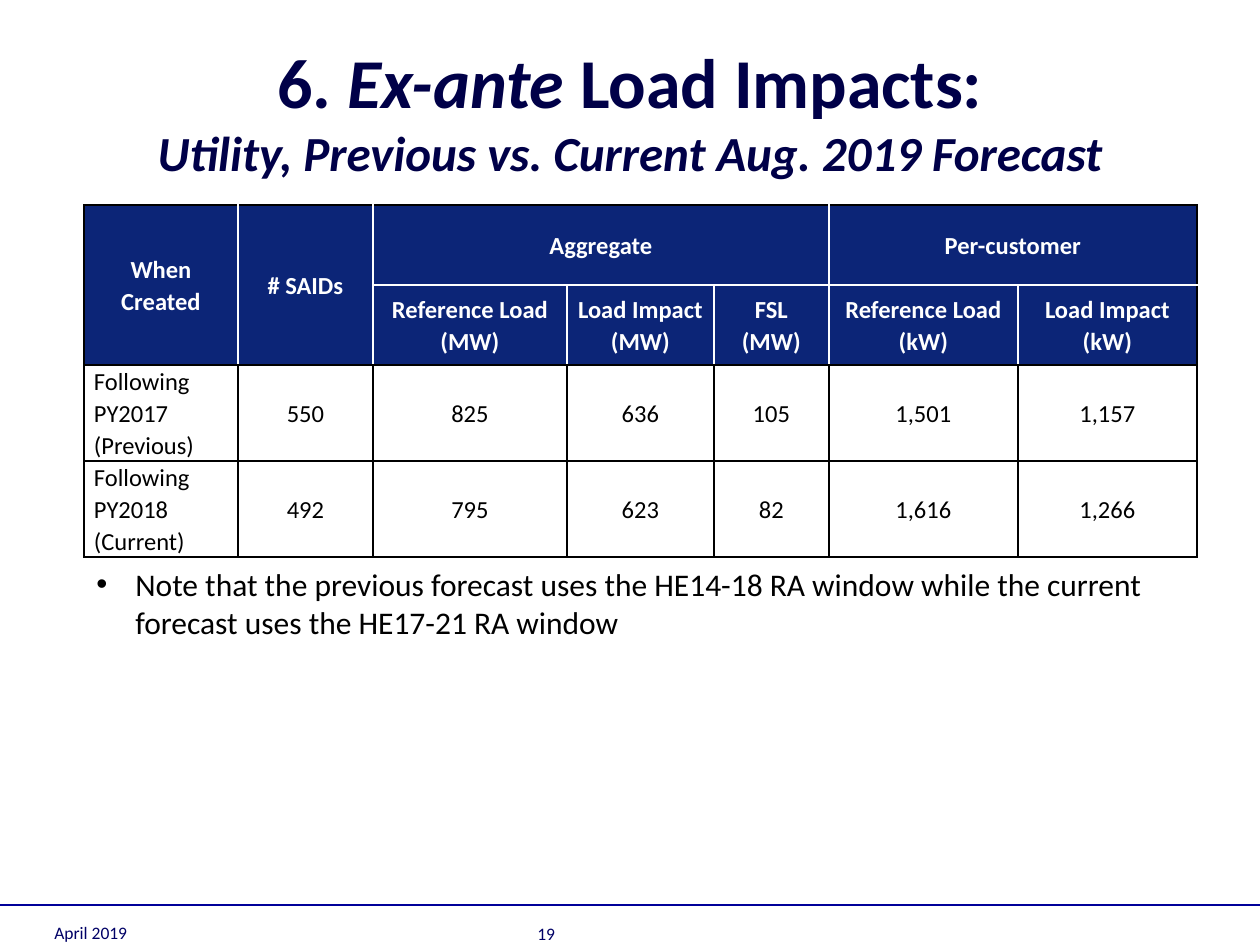
from dataclasses import dataclass
from typing import Any

from lxml.etree import SubElement as Sub
from pptx import Presentation as Deck
from pptx.dml.color import RGBColor as Rgb
from pptx.enum.shapes import MSO_CONNECTOR as Link
from pptx.enum.text import MSO_ANCHOR as Anchor, MSO_AUTO_SIZE as Fit, PP_ALIGN as Align
from pptx.oxml.ns import qn
from pptx.util import Emu, Pt


@dataclass(frozen=True)
class Theme:
    face: str = "Calibri"
    black: str = "000000"
    white: str = "FFFFFF"
    navy: str = "0C2577"
    title: str = "000048"
    foot: str = "000066"
    rule: str = "000099"
    head: int = 40
    sub: int = 28
    note: int = 18
    cell: int = 14
    small: int = 10


@dataclass(frozen=True)
class Box:
    left: int
    top: int
    width: int
    height: int


@dataclass(frozen=True)
class Part:
    text: str
    size: int
    slant: bool


@dataclass(frozen=True)
class Span:
    row: int
    col: int
    last_row: int
    last_col: int


T = Theme()
COLS = [154, 135, 194, 147, 115, 189, 179]
ROWS = [80, 80, 96, 96]
HEADS = 2
GRID = [
    ["When Created", "# SAIDs", "Aggregate", "", "", "Per-customer", ""],
    ["", "", "Reference Load (MW)", "Load Impact (MW)", "FSL (MW)",
     "Reference Load (kW)", "Load Impact (kW)"],
    ["Following PY2017 (Previous)", "550", "825", "636", "105", "1,501", "1,157"],
    ["Following PY2018 (Current)", "492", "795", "623", "82", "1,616", "1,266"],
]
SPANS = [Span(0, 0, 1, 0), Span(0, 1, 1, 1), Span(0, 2, 0, 4), Span(0, 5, 0, 6)]
TITLE = [
    [Part("6. ", T.head, False), Part("Ex-ante", T.head, True),
     Part(" Load Impacts:", T.head, False)],
    [Part("Utility, Previous vs. Current Aug. 2019 Forecast", T.sub, True)],
]
NOTE = ("Note that the previous forecast uses the HE14-18 RA window "
        "while the current forecast uses the HE17-21 RA window")
FEET = {"April 2019": Box(42, 883, 294, 66), "19": Box(525, 884, 294, 66)}


def px(count: int) -> Emu:
    """Turn pixels into EMU."""
    return Emu(round(count * 914400 / 126))


def style(font: Any, size: int, color: str, bold: bool = False, slant: bool = False) -> None:
    """Set the face, size, colour and weight of a font."""
    font.name, font.size = T.face, Pt(size)
    font.bold, font.italic = bold, slant
    font.color.rgb = Rgb.from_string(color)


def frame(slide: Any, box: Box, anchor: Anchor) -> Any:
    """Add a wrapping text box and return its text frame."""
    shape = slide.shapes.add_textbox(px(box.left), px(box.top), px(box.width), px(box.height))
    text = shape.text_frame
    text.word_wrap, text.vertical_anchor = True, anchor
    return text


def add_title(slide: Any) -> None:
    """Draw the two title lines with their mixed runs."""
    para = frame(slide, Box(63, 31, 1134, 158), Anchor.MIDDLE).paragraphs[0]
    para.alignment = Align.CENTER
    for row, parts in enumerate(TITLE):
        if row:
            para.add_line_break()
        for part in parts:
            run = para.add_run()
            run.text = part.text
            style(run.font, part.size, T.title, True, part.slant)


def edge(cell: Any, side: str, color: str) -> None:
    """Draw one border of a cell."""
    line = Sub(cell._tc.get_or_add_tcPr(), qn(f"a:ln{side}"), w=str(Pt(1)))
    Sub(Sub(line, qn("a:solidFill")), qn("a:srgbClr"), val=color)


def fill_cell(cell: Any, text: str, row: int, col: int) -> None:
    """Write and style one table cell."""
    head = row < HEADS
    label = not head and col == 0
    tall = cell.span_height if cell.is_merge_origin else 1
    wide = cell.span_width if cell.is_merge_origin else 1
    outer = {"L": col == 0, "R": col + wide == len(COLS),
             "T": row == 0, "B": row + tall == HEADS}
    for side, dark in outer.items():
        edge(cell, side, T.black if dark or not head else T.white)
    if head:
        cell.fill.solid()
        cell.fill.fore_color.rgb = Rgb.from_string(T.navy)
    else:
        cell.fill.background()
    cell.margin_left = cell.margin_right = px(10)
    cell.margin_top = cell.margin_bottom = 0
    cell.vertical_anchor = Anchor.TOP if label else Anchor.MIDDLE
    if cell.is_spanned:
        return
    cell.text_frame.text = text
    para = cell.text_frame.paragraphs[0]
    para.alignment = Align.LEFT if label else Align.CENTER
    para.line_spacing = 1.07
    style(para.runs[0].font, T.cell, T.white if head else T.black, head)


def add_grid(slide: Any) -> None:
    """Draw the forecast table."""
    table = slide.shapes.add_table(len(ROWS), len(COLS), px(84), px(205),
                                   px(sum(COLS)), px(sum(ROWS))).table
    table.first_row = table.horz_banding = False
    for col, width in zip(table.columns, COLS):
        col.width = px(width)
    for row, height in zip(table.rows, ROWS):
        row.height = px(height)
    for span in SPANS:
        table.cell(span.row, span.col).merge(table.cell(span.last_row, span.last_col))
    for row, texts in enumerate(GRID):
        for col, text in enumerate(texts):
            fill_cell(table.cell(row, col), text, row, col)


def add_note(slide: Any) -> None:
    """Draw the bulleted note below the table."""
    text = frame(slide, Box(84, 559, 1092, 89), Anchor.TOP)
    text.auto_size = Fit.SHAPE_TO_FIT_TEXT
    text.text = NOTE
    para = text.paragraphs[0]
    props = para._p.get_or_add_pPr()
    props.set("marL", str(px(39)))
    props.set("indent", str(-px(39)))
    Sub(props, qn("a:buFont"), typeface="Arial")
    Sub(props, qn("a:buChar"), char="•")
    style(para.runs[0].font, T.note, T.black)


def add_foot(slide: Any) -> None:
    """Draw the rule, the date and the page number."""
    rule = slide.shapes.add_connector(Link.STRAIGHT, 0, px(905), px(1260), px(905))
    rule.line.color.rgb, rule.line.width = Rgb.from_string(T.rule), Pt(0.75)
    Sub(rule._element.spPr, qn("a:effectLst"))
    for words, box in FEET.items():
        text = frame(slide, box, Anchor.BOTTOM)
        text.text = words
        style(text.paragraphs[0].runs[0].font, T.small, T.foot)


def main() -> None:
    """Build and save the slide."""
    deck = Deck()
    deck.slide_width, deck.slide_height = px(1260), px(945)
    slide = deck.slides.add_slide(deck.slide_layouts[6])
    for draw in (add_foot, add_title, add_grid, add_note):
        draw(slide)
    deck.save("out.pptx")


if __name__ == "__main__":
    main()
